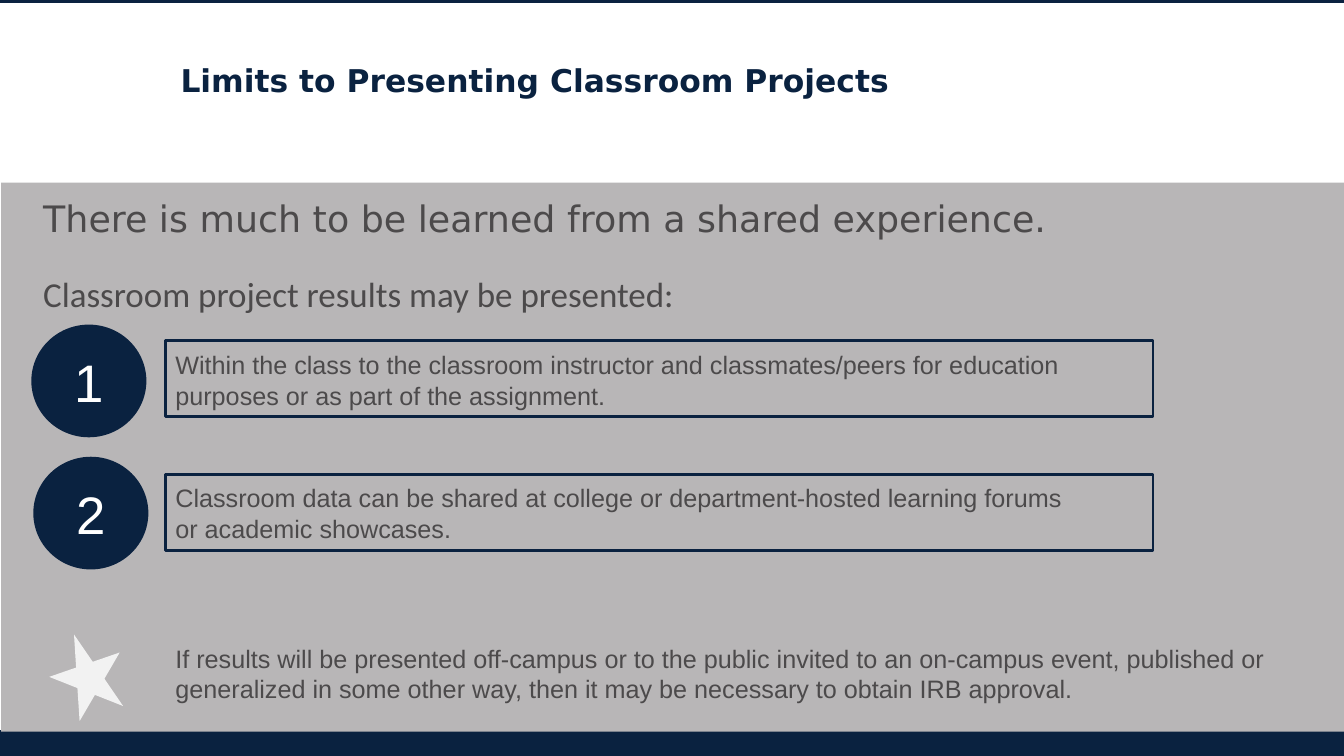
"""Build the slide on limits to presenting classroom projects."""
from pptx import Presentation
from pptx.dml.color import RGBColor
from pptx.enum.shapes import MSO_SHAPE
from pptx.enum.text import MSO_ANCHOR, PP_ALIGN
from pptx.util import Cm, Pt

COLORS = {"navy": "0A2240", "gray": "B8B6B7", "text": "4C4A4B",
          "white": "FFFFFF", "star": "F2F2F2"}

prs = Presentation()
prs.slide_width, prs.slide_height = Cm(33.87), Cm(19.05)
s = prs.slides.add_slide(prs.slide_layouts[6])


def add_shape(kind, box, fill=None, line_width=None):
    sp = s.shapes.add_shape(kind, *[Cm(v) for v in box])
    sp.shadow.inherit = False
    if fill:
        sp.fill.solid()
        sp.fill.fore_color.rgb = RGBColor.from_string(COLORS[fill])
    else:
        sp.fill.background()
    if line_width:
        sp.line.color.rgb = RGBColor.from_string(COLORS["navy"])
        sp.line.width = Pt(line_width)
    else:
        sp.line.fill.background()
    return sp


def write(p, text, size, font="Arial", color="text", bold=False):
    p.text = text
    p.font.size = Pt(size)
    p.font.name = font
    p.font.bold = bold
    p.font.color.rgb = RGBColor.from_string(COLORS[color])


add_shape(MSO_SHAPE.RECTANGLE, (-0.08, 0, 34.06, 18.49), "white", 4.5)
add_shape(MSO_SHAPE.RECTANGLE, (-0.08, 18.47, 34.06, 0.71), "navy", 4.5)
add_shape(MSO_SHAPE.RECTANGLE, (0.03, 4.6, 33.86, 13.84), "gray")

tf = s.shapes.add_textbox(Cm(4.55), Cm(1.55), Cm(24.77), Cm(0.97)).text_frame
tf.word_wrap = True
tf.margin_left = tf.margin_right = tf.margin_top = tf.margin_bottom = 0
write(tf.paragraphs[0], "Limits to Presenting Classroom Projects", 22.4,
      "DejaVu Sans", "navy", True)

tf = s.shapes.add_textbox(Cm(0.84), Cm(4.83), Cm(32.21), Cm(3.28)).text_frame
tf.word_wrap = True
write(tf.paragraphs[0], "There is much to be learned from a shared experience.",
      26, "DejaVu Sans")
p = tf.add_paragraph()
p.space_before = Pt(22.9)
write(p, "Classroom project results may be presented:", 25, "Calibri")

for number, left, top, frame_top in (("1", 0.79, 8.18, 8.59), ("2", 0.84, 11.51, 11.96)):
    sp = add_shape(MSO_SHAPE.OVAL, (left, top, 2.9, 2.84), "navy")
    tf = sp.text_frame
    tf.vertical_anchor = MSO_ANCHOR.MIDDLE
    tf.paragraphs[0].alignment = PP_ALIGN.CENTER
    write(tf.paragraphs[0], number, 37.7, color="white")
    add_shape(MSO_SHAPE.RECTANGLE, (4.17, frame_top, 24.89, 1.91), line_width=2)

statements = [
    (8.69, 25.17, "Within the class to the classroom instructor and classmates/peers "
     "for education purposes or as part of the assignment."),
    (12.04, 23.44, "Classroom data can be shared at college or department-hosted "
     "learning forums or academic showcases."),
    (16.08, 29.01, "If results will be presented off-campus or to the public invited "
     "to an on-campus event, published or generalized in some other way, then it may "
     "be necessary to obtain IRB approval."),
]
for top, width, text in statements:
    tf = s.shapes.add_textbox(Cm(4.17), Cm(top), Cm(width), Cm(1.8)).text_frame
    tf.word_wrap = True
    write(tf.paragraphs[0], text, 18)

star = add_shape(MSO_SHAPE.STAR_5_POINT, (1.27, 15.93, 1.88, 2.11), "star")
star.rotation = 340.9

prs.save("out.pptx")
